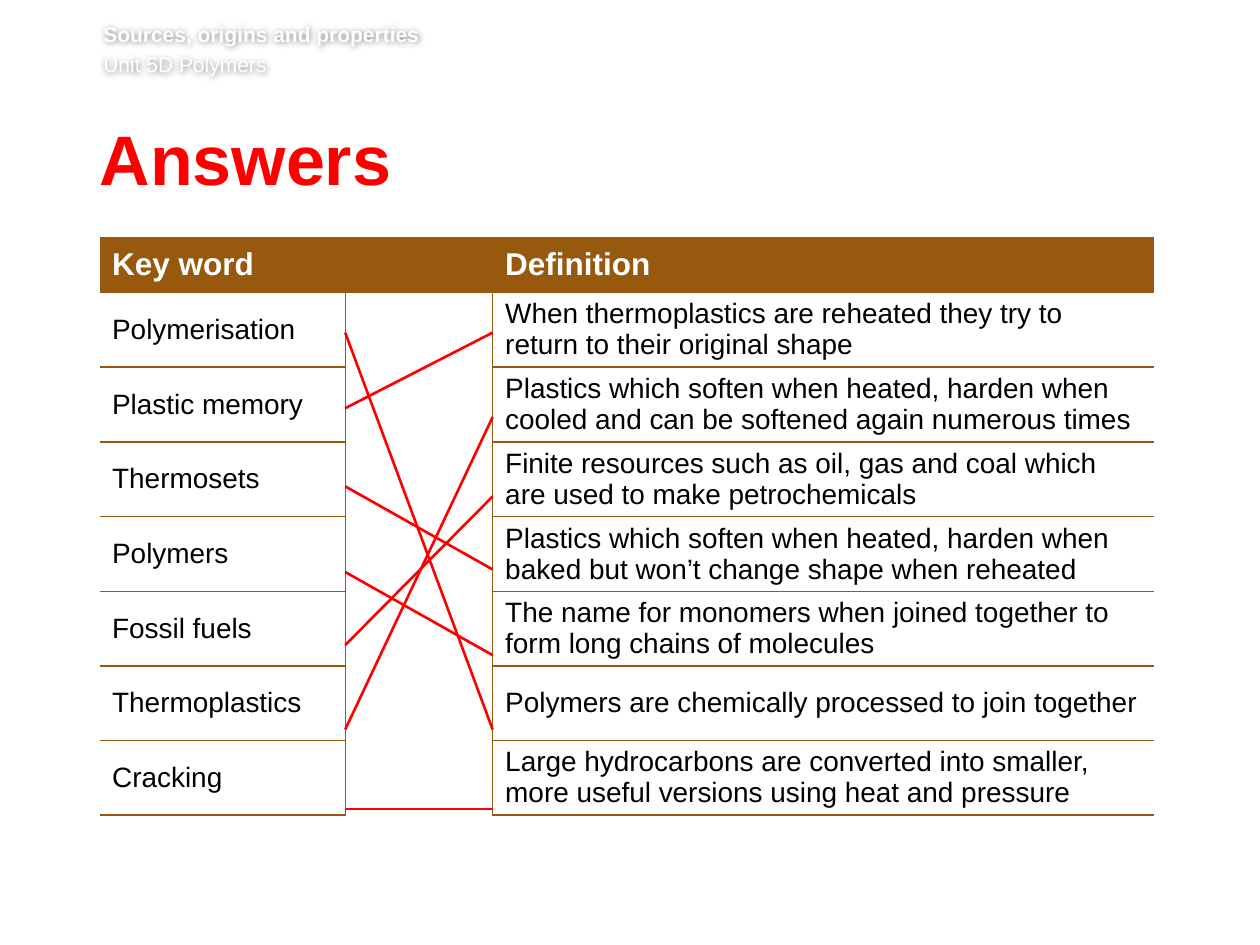
from lxml import etree
from pptx import Presentation
from pptx.dml.color import RGBColor
from pptx.enum.shapes import MSO_CONNECTOR
from pptx.enum.text import MSO_ANCHOR, PP_ALIGN
from pptx.oxml.ns import qn
from pptx.util import Inches, Pt

STRAIGHT = MSO_CONNECTOR.STRAIGHT
TOP, MIDDLE = MSO_ANCHOR.TOP, MSO_ANCHOR.MIDDLE
LEFT = PP_ALIGN.LEFT
TITLE_ONLY = 5

COLORS = {"brown": "97590D", "red": "FF0000", "white": "FFFFFF", "black": "000000"}
FONT = "Arial"

HEADER_LINES = [("Sources, origins and properties", True), ("Unit 5D Polymers", False)]
KEY_WORDS = ["Polymerisation", "Plastic memory", "Thermosets", "Polymers",
             "Fossil fuels", "Thermoplastics", "Cracking"]
DEFINITIONS = [
    "When thermoplastics are reheated they try to return to their original shape",
    "Plastics which soften when heated, harden when cooled and can be softened again numerous times",
    "Finite resources such as oil, gas and coal which are used to make petrochemicals",
    "Plastics which soften when heated, harden when baked but won’t change shape when reheated",
    "The name for monomers when joined together to form long chains of molecules",
    "Polymers are chemically processed to join together",
    "Large hydrocarbons are converted into smaller, more useful versions using heat and pressure",
]
COLUMN_WIDTHS = [1.95, 1.17, 5.25]
HEADING_HEIGHT, ROW_HEIGHT = 0.44, 0.59
MATCHES = [5, 0, 3, 4, 2, 1, 6]
KEY_WORD_ENDS = [0.76, 1.36, 1.98, 2.66, 3.24, 3.91, 4.54]
DEFINITION_ENDS = [0.76, 1.43, 2.06, 2.64, 3.32, 3.91, 4.54]


def color(name):
    return RGBColor.from_string(COLORS[name])


def style_font(font, size, color_name, bold):
    font.name = FONT
    font.size = Pt(size)
    font.bold = bold
    font.color.rgb = color(color_name)


def set_margins(frame, left, top, right, bottom):
    frame.margin_left, frame.margin_top = Inches(left), Inches(top)
    frame.margin_right, frame.margin_bottom = Inches(right), Inches(bottom)


def add_halo(shape):
    effects = etree.SubElement(shape._element.spPr, qn("a:effectLst"))
    shadow = etree.SubElement(effects, qn("a:outerShdw"), blurRad=str(Pt(4)), dist="0",
                              algn="ctr", rotWithShape="0")
    shadow_color = etree.SubElement(shadow, qn("a:srgbClr"), val=COLORS["black"])
    etree.SubElement(shadow_color, qn("a:alpha"), val="50000")


def add_header(slide, left, top, width, height):
    box = slide.shapes.add_textbox(*map(Inches, (left, top, width, height)))
    add_halo(box)
    frame = box.text_frame
    frame.word_wrap = True
    set_margins(frame, 0, 0, 0, 0.05)
    for index, (text, bold) in enumerate(HEADER_LINES):
        paragraph = frame.add_paragraph() if index else frame.paragraphs[0]
        if index:
            paragraph.space_before = Pt(2.9)
        paragraph.text = text
        style_font(paragraph.font, 12, "white", bold)


def add_title(slide, left, top, width, height):
    title = slide.shapes.title
    title.left, title.top, title.width, title.height = map(Inches, (left, top, width, height))
    frame = title.text_frame
    frame.text = "Answers"
    frame.vertical_anchor = TOP
    set_margins(frame, 0, 0.05, 0.1, 0.05)
    paragraph = frame.paragraphs[0]
    paragraph.alignment = LEFT
    paragraph.line_spacing = Pt(39)
    style_font(paragraph.font, 40, "red", True)


def set_borders(cell, sides):
    properties = cell._tc.get_or_add_tcPr()
    for side in "LRTB":
        line = etree.SubElement(properties, qn(f"a:ln{side}"), w=str(Pt(1)))
        if side in sides:
            fill = etree.SubElement(line, qn("a:solidFill"))
            etree.SubElement(fill, qn("a:srgbClr"), val=COLORS["brown"])
        else:
            etree.SubElement(line, qn("a:noFill"))


def cell_borders(row, column):
    if column == 1:
        return "LR" + ("B" if row == 0 else "T" if row == 1 else "")
    return ("R" if column == 0 else "L") + ("TB" if row else "B")


def add_matching_table(slide, left, top):
    rows = [("Key word", "", "Definition")]
    rows += [(word, "", definition) for word, definition in zip(KEY_WORDS, DEFINITIONS)]
    heights = [HEADING_HEIGHT] + [ROW_HEIGHT] * len(KEY_WORDS)
    table = slide.shapes.add_table(
        len(rows), len(COLUMN_WIDTHS), Inches(left), Inches(top),
        Inches(sum(COLUMN_WIDTHS)), Inches(sum(heights))).table
    table.horz_banding = False
    for column, width in zip(table.columns, COLUMN_WIDTHS):
        column.width = Inches(width)
    for row_index, (texts, height) in enumerate(zip(rows, heights)):
        table.rows[row_index].height = Inches(height)
        heading = row_index == 0
        for column_index, text in enumerate(texts):
            cell = table.cell(row_index, column_index)
            set_borders(cell, cell_borders(row_index, column_index))
            if heading:
                cell.fill.solid()
                cell.fill.fore_color.rgb = color("brown")
            else:
                cell.fill.background()
            cell.vertical_anchor = MIDDLE
            set_margins(cell, 0.1, 0.03, 0.1, 0.03)
            cell.text = text
            style_font(cell.text_frame.paragraphs[0].font, 18 if heading else 16,
                       "white" if heading else "black", heading)


def add_match_lines(slide, left, top, width):
    for start, match in zip(KEY_WORD_ENDS, MATCHES):
        line = slide.shapes.add_connector(
            STRAIGHT, Inches(left), Inches(top + start),
            Inches(left + width), Inches(top + DEFINITION_ENDS[match]))
        line.line.color.rgb = color("red")
        line.line.width = Pt(1.5)
        etree.SubElement(line._element.spPr, qn("a:effectLst"))


def main():
    presentation = Presentation()
    presentation.slide_width, presentation.slide_height = Inches(10), Inches(7.5)
    slide = presentation.slides.add_slide(presentation.slide_layouts[TITLE_ONLY])
    table_left, table_top = 0.79, 1.88
    add_header(slide, 0.82, 0.17, 8.82, 0.49)
    add_title(slide, table_left, 0.99, 8.55, 0.73)
    add_matching_table(slide, table_left, table_top)
    add_match_lines(slide, table_left + COLUMN_WIDTHS[0], table_top, COLUMN_WIDTHS[1])
    presentation.save("out.pptx")


if __name__ == "__main__":
    main()
